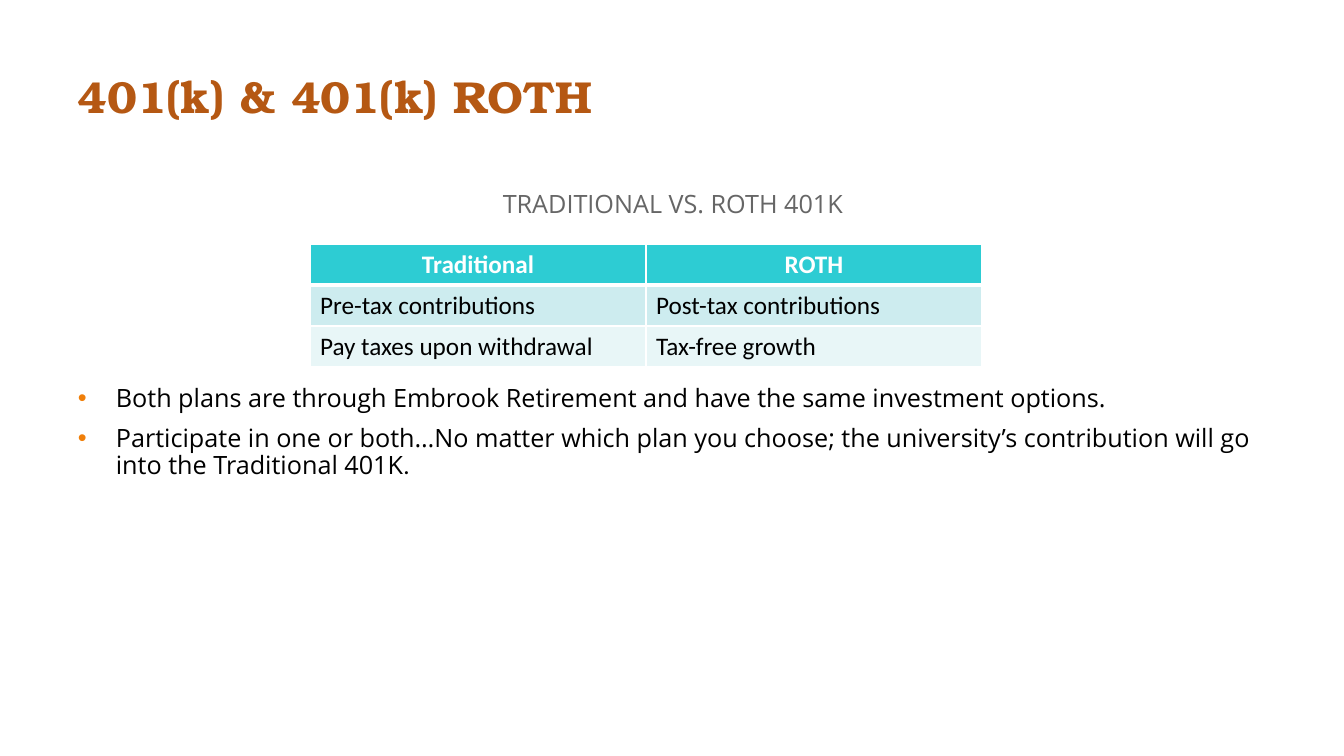
from lxml.etree import SubElement
from pptx import Presentation
from pptx.dml.color import RGBColor
from pptx.enum.text import MSO_ANCHOR, PP_ALIGN
from pptx.oxml import parse_xml
from pptx.oxml.ns import nsdecls, qn
from pptx.util import Pt

EMU_PER_PIXEL = 914400 / 100.8
BODY_FONT = "Open Sans"
TABLE_FONT = "Calibri"
BLACK, WHITE = "000000", "FFFFFF"
TABLE_ROWS = [
    ("Traditional", "ROTH"),
    ("Pre-tax contributions", "Post-tax contributions"),
    ("Pay taxes upon withdrawal", "Tax-free growth"),
]
ROW_FILLS = ["2DCCD3", "CDECEF", "E8F6F7"]
BULLETS = [
    [("Both plans are through Embrook Retirement and have the same investment options.", BODY_FONT)],
    [("Participate in one or both…No matter which plan you choose; the university’s "
      "contribution will go into the Traditional 401K", BODY_FONT), (".", TABLE_FONT)],
]


def px(length):
    return round(length * EMU_PER_PIXEL)


def color(value):
    return RGBColor.from_string(value)


def add_run(paragraph, text, font, size, value, bold=False):
    run = paragraph.add_run()
    run.text = text
    run.font.name = font
    run.font.size = Pt(size)
    run.font.bold = bold
    run.font.color.rgb = color(value)


def add_text_frame(slide, box, anchor=MSO_ANCHOR.TOP):
    text_frame = slide.shapes.add_textbox(*map(px, box)).text_frame
    text_frame.word_wrap = True
    text_frame.vertical_anchor = anchor
    return text_frame


def add_title(slide, box):
    paragraph = add_text_frame(slide, box, MSO_ANCHOR.MIDDLE).paragraphs[0]
    add_run(paragraph, "401(k) & 401(k) ROTH", "TeX Gyre Bonum", 32, "B55813", True)


def add_caption(slide, box):
    paragraph = add_text_frame(slide, box).paragraphs[0]
    paragraph.alignment = PP_ALIGN.CENTER
    paragraph.line_spacing = 0.9
    add_run(paragraph, "TRADITIONAL VS. ROTH 401K", BODY_FONT, 18, "666666")


def set_bullet(paragraph, indent):
    properties = paragraph._p.get_or_add_pPr()
    properties.set("marL", str(px(indent)))
    properties.set("indent", str(-px(indent)))
    bullet_color = SubElement(properties, qn("a:buClr"))
    SubElement(bullet_color, qn("a:srgbClr"), val="F07F09")
    SubElement(properties, qn("a:buFont"), typeface="Arial")
    SubElement(properties, qn("a:buChar"), char="•")


def add_bullets(slide, box):
    text_frame = add_text_frame(slide, box)
    for index, runs in enumerate(BULLETS):
        paragraph = text_frame.add_paragraph() if index else text_frame.paragraphs[0]
        set_bullet(paragraph, 38)
        paragraph.line_spacing = 0.9
        if index:
            paragraph.space_before = Pt(9)
        for text, font in runs:
            add_run(paragraph, text, font, 18, BLACK)


def set_borders(cell, row):
    widths = {"L": 1, "R": 1, "T": 3 if row == 1 else 1, "B": 3 if row == 0 else 1}
    properties = cell._tc.get_or_add_tcPr()
    for position, (side, width) in enumerate(widths.items()):
        properties.insert(position, parse_xml(
            f'<a:ln{side} {nsdecls("a")} w="{Pt(width)}"><a:solidFill>'
            f'<a:srgbClr val="{WHITE}"/></a:solidFill></a:ln{side}>'))


def add_comparison_table(slide, box):
    table = slide.shapes.add_table(len(TABLE_ROWS), 2, *map(px, box)).table
    for column in table.columns:
        column.width = px(box[2] / 2)
    for row, texts in enumerate(TABLE_ROWS):
        table.rows[row].height = px(box[3] / len(TABLE_ROWS))
        is_header = row == 0
        for column, text in enumerate(texts):
            cell = table.cell(row, column)
            cell.fill.solid()
            cell.fill.fore_color.rgb = color(ROW_FILLS[row])
            set_borders(cell, row)
            paragraph = cell.text_frame.paragraphs[0]
            paragraph.alignment = PP_ALIGN.CENTER if is_header else PP_ALIGN.LEFT
            add_run(paragraph, text, TABLE_FONT, 18, WHITE if is_header else BLACK, is_header)


def main():
    presentation = Presentation()
    presentation.slide_width = px(1344)
    presentation.slide_height = px(756)
    slide = presentation.slides.add_slide(presentation.slide_layouts[6])
    add_title(slide, (68, 33, 1210, 126))
    add_caption(slide, (68, 187, 1210, 42))
    add_bullets(slide, (68, 381, 1210, 266))
    add_comparison_table(slide, (310, 244, 672, 123))
    presentation.save("out.pptx")


if __name__ == "__main__":
    main()
